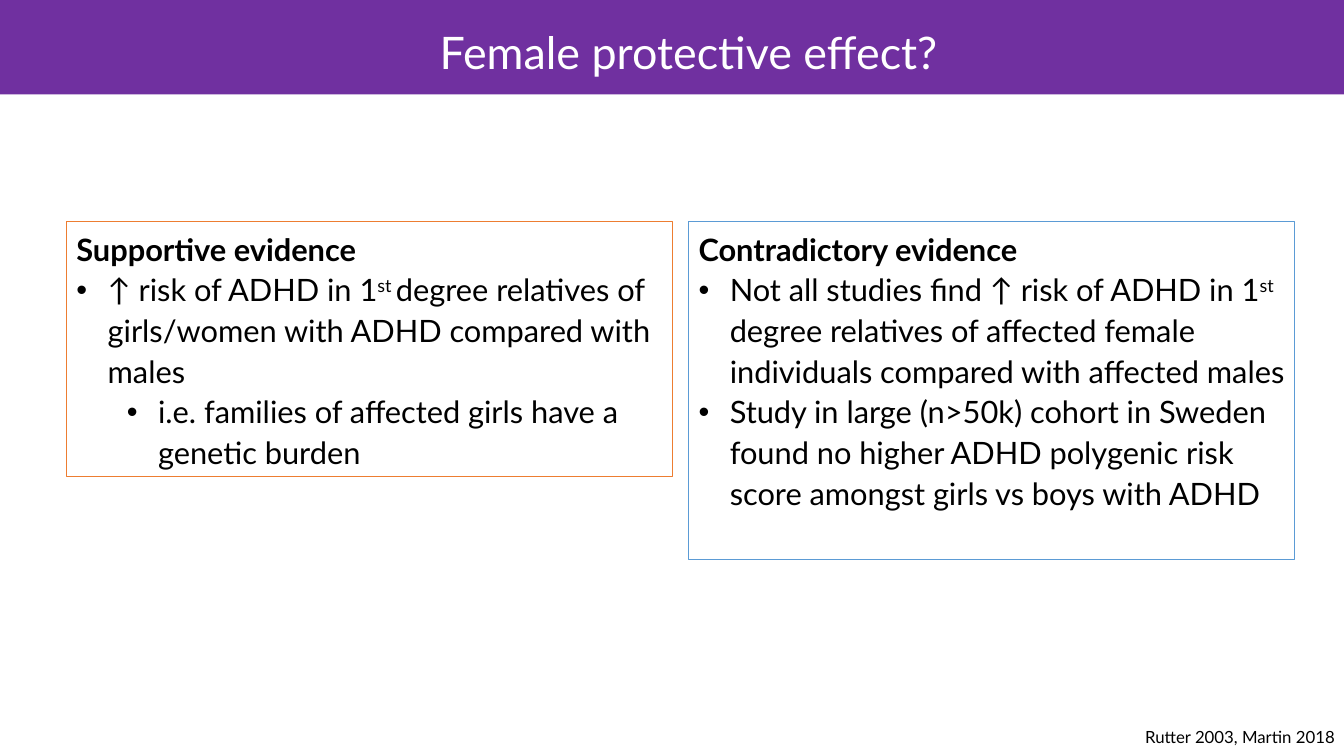
from pptx import Presentation
from pptx.dml.color import RGBColor
from pptx.enum.shapes import MSO_SHAPE as Preset
from pptx.enum.text import MSO_ANCHOR as Anchor, PP_ALIGN as Align
from pptx.util import Inches, Pt
from lxml.etree import SubElement
from pptx.oxml.ns import qn

WIDTH, HEIGHT = 13.33, 7.5
FONT = "Lato"
COLORS = {
    "banner": "7030A0",
    "paper": "FFFFFF",
    "ink": "000000",
    "supportive": "ED7D31",
    "contradictory": "5B9BD5",
}
PANEL_LEFT, PANEL_TOP, PANEL_WIDTH, PANEL_GAP = 0.66, 2.2, 6.01, 0.16
INDENT, LEVEL_STEP = 0.31, 0.5

PANELS = [
    ("supportive", 2.53, "Supportive evidence", [
        (0, ["↑ risk of ADHD in 1", "st ",
             "degree relatives of girls/women with ADHD compared with males"]),
        (1, ["i.e. families of affected girls have a genetic burden"]),
    ]),
    ("contradictory", 3.35, "Contradictory evidence", [
        (0, ["Not all studies find ↑ risk of ADHD in 1", "st ",
             "degree relatives of affected female individuals compared with affected males"]),
        (0, ["Study in large (n>50k) cohort in Sweden found no higher ADHD "
             "polygenic risk score amongst girls vs boys with ADHD"]),
    ]),
]


def color(name):
    return RGBColor.from_string(COLORS[name])


def add_run(paragraph, text, size, ink="ink", bold=False):
    run = paragraph.add_run()
    run.text = text
    run.font.name = FONT
    run.font.size = Pt(size)
    run.font.bold = bold
    run.font.color.rgb = color(ink)
    return run


def add_rectangle(slide, box, fill):
    shape = slide.shapes.add_shape(Preset.RECTANGLE, *map(Inches, box))
    shape.shadow.inherit = False
    shape.fill.solid()
    shape.fill.fore_color.rgb = color(fill)
    shape.line.fill.background()
    return shape


def set_bullet(paragraph, level):
    paragraph.level = level
    properties = paragraph._p.get_or_add_pPr()
    properties.set("marL", str(Inches(INDENT + level * LEVEL_STEP)))
    properties.set("indent", str(-Inches(INDENT)))
    SubElement(properties, qn("a:buFont"), typeface="Arial")
    SubElement(properties, qn("a:buChar"), char="•")


def add_banner(slide, box, text):
    left, top, width, height = box
    add_rectangle(slide, box, "banner")
    title = slide.shapes.title
    slide.shapes._spTree.append(title._element)
    title.left, title.top = Inches(left + 1.08), Inches(top - 0.18)
    title.width, title.height = Inches(11.5), Inches(1.45)
    title.text_frame.vertical_anchor = Anchor.MIDDLE
    paragraph = title.text_frame.paragraphs[0]
    paragraph.alignment = Align.CENTER
    paragraph.line_spacing = 0.9
    add_run(paragraph, text, 32, "paper")


def add_panel(slide, box, accent, heading, points):
    panel = add_rectangle(slide, box, "paper")
    panel.line.color.rgb = color(accent)
    panel.line.width = Pt(1)
    frame = panel.text_frame
    frame.word_wrap = True
    frame.vertical_anchor = Anchor.TOP
    paragraph = frame.paragraphs[0]
    paragraph.alignment = Align.LEFT
    paragraph.line_spacing = 1.1
    add_run(paragraph, heading, 22, bold=True)
    for level, texts in points:
        paragraph = frame.add_paragraph()
        paragraph.alignment = Align.LEFT
        paragraph.line_spacing = 1.1
        set_bullet(paragraph, level)
        for text in texts:
            run = add_run(paragraph, text, 22)
            if text == "st ":
                run._r.get_or_add_rPr().set("baseline", "30000")


def add_citation(slide, box, text):
    citation = slide.shapes.add_textbox(*map(Inches, box))
    citation.text_frame.word_wrap = True
    add_run(citation.text_frame.paragraphs[0], text, 12)


def main():
    presentation = Presentation()
    presentation.slide_width = Inches(WIDTH)
    presentation.slide_height = Inches(HEIGHT)
    slide = presentation.slides.add_slide(presentation.slide_layouts[5])
    add_citation(slide, (11.26, 7.16, 2.36, 0.3), "Rutter 2003, Martin 2018")
    for column, (accent, height, heading, points) in enumerate(PANELS):
        left = PANEL_LEFT + column * (PANEL_WIDTH + PANEL_GAP)
        add_panel(slide, (left, PANEL_TOP, PANEL_WIDTH, height), accent, heading, points)
    add_banner(slide, (0, 0, WIDTH, HEIGHT / 8), "Female protective effect?")
    presentation.save("out.pptx")


if __name__ == "__main__":
    main()
